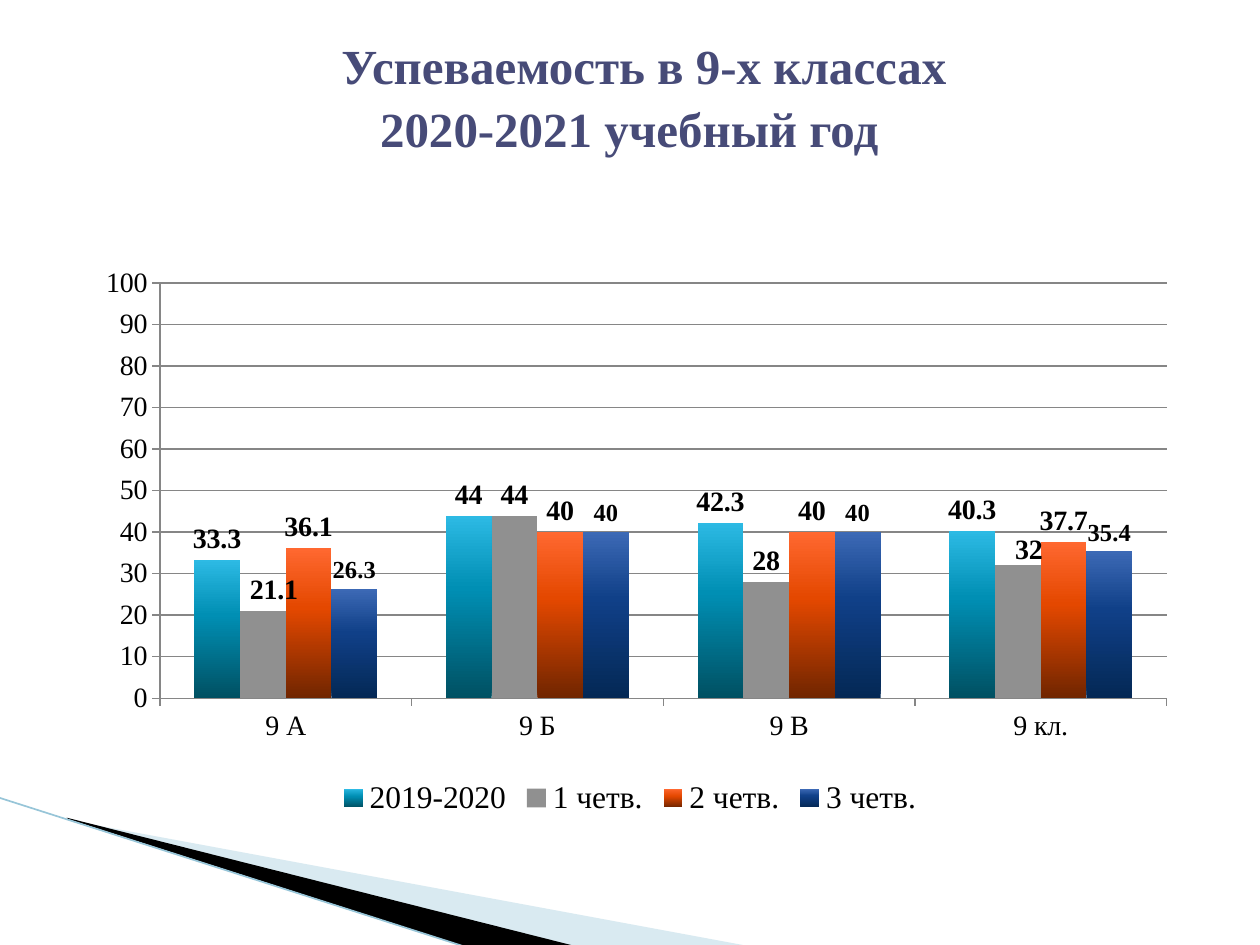
import copy

import pptx
import pptx.chart.data
import pptx.dml.color
import pptx.enum.chart
import pptx.enum.text
import pptx.oxml
import pptx.oxml.ns
import pptx.util
from lxml import etree

Inches, Pt = pptx.util.Inches, pptx.util.Pt
RGBColor = pptx.dml.color.RGBColor
qn = pptx.oxml.ns.qn

SERIF, MONO = "Times New Roman", "DejaVu Sans Mono"
BLACK = RGBColor(0x00, 0x00, 0x00)
PALE_BLUE = RGBColor(0xA0, 0xCB, 0xDC)
EDGE_BLUE = RGBColor(0x97, 0xC5, 0xD8)
INDIGO = RGBColor(0x47, 0x4B, 0x78)
DARK_GRAY = RGBColor(0x46, 0x46, 0x46)
AXIS_GRAY = RGBColor(0x86, 0x86, 0x86)
BAR_GRAY = RGBColor(0x90, 0x90, 0x90)
# Bar gradients run from the foot of the bar to its top
TEAL = [RGBColor(0x00, 0x50, 0x62), RGBColor(0x00, 0x8F, 0xB4), RGBColor(0x2D, 0xBA, 0xE4)]
ORANGE = [RGBColor(0x70, 0x25, 0x00), RGBColor(0xE4, 0x48, 0x00), RGBColor(0xFF, 0x68, 0x30)]
NAVY = [RGBColor(0x04, 0x28, 0x55), RGBColor(0x10, 0x40, 0x88), RGBColor(0x3C, 0x69, 0xB5)]


class SlideBuilder:
    def __init__(self, slide):
        self.slide = slide

    def style(self, font, size, color=BLACK, bold=False, name=SERIF):
        font.name, font.size, font.bold = name, Pt(size), bold
        font.color.rgb = color

    def title(self, lines, box, size):
        title = self.slide.shapes.title
        title.left, title.top, title.width, title.height = map(Inches, box)
        frame = title.text_frame
        frame.auto_size = pptx.enum.text.MSO_AUTO_SIZE.NONE
        frame.vertical_anchor = pptx.enum.text.MSO_ANCHOR.MIDDLE
        paragraph = frame.paragraphs[0]
        paragraph.alignment = pptx.enum.text.PP_ALIGN.CENTER
        lead = paragraph.add_run()
        lead.text = " "
        self.style(lead.font, 39.6, DARK_GRAY, True, MONO)
        for line in lines:
            run = paragraph.add_run()
            run.text = line
            self.style(run.font, size, INDIGO, True)
            paragraph.add_line_break()
        # Line breaks keep the height of the text around them
        for line_break in paragraph._p.findall(qn("a:br")):
            line_break.append(copy.deepcopy(run._r.find(qn("a:rPr"))))
        etree.SubElement(paragraph._p, qn("a:endParaRPr"), sz=str(int(size * 100)))

    def wedge(self, points, color, opacity=None):
        corners = [(Inches(x), Inches(y)) for x, y in points]
        builder = self.slide.shapes.build_freeform(*corners[0])
        builder.add_line_segments(corners[1:], close=True)
        wedge = builder.convert_to_shape()
        wedge.shadow.inherit = False
        wedge.fill.solid()
        wedge.fill.fore_color.rgb = color
        wedge.line.fill.background()
        if opacity:
            fill = wedge._element.spPr.find(qn("a:solidFill"))
            etree.SubElement(fill[0], qn("a:alpha"), val=str(opacity * 1000))

    def line(self, start, end, color, width):
        line = self.slide.shapes.add_connector(
            pptx.enum.shapes.MSO_CONNECTOR.STRAIGHT, *map(Inches, start + end))
        line.line.color.rgb = color
        line.line.width = Pt(width)
        etree.SubElement(line._element.spPr, qn("a:effectLst"))

    def paint(self, fill, colors):
        if isinstance(colors, RGBColor):
            fill.solid()
            fill.fore_color.rgb = colors
            return
        fill.gradient()
        fill.gradient_angle = 90
        stops = fill.gradient_stops
        first = stops[0]._gs
        first.addnext(copy.deepcopy(first))
        for stop, color, position in zip(fill.gradient_stops, colors, (0, 0.6, 1)):
            stop.color.rgb = color
            stop.position = position

    def layout(self, **values):
        layout = etree.Element(qn("c:layout"))
        manual = etree.SubElement(layout, qn("c:manualLayout"))
        for tag, value in values.items():
            etree.SubElement(manual, qn("c:" + tag), val=str(value))
        return layout

    def axis(self, axis, size):
        axis.major_tick_mark = pptx.enum.chart.XL_TICK_MARK.OUTSIDE
        axis.minor_tick_mark = pptx.enum.chart.XL_TICK_MARK.NONE
        axis.format.line.color.rgb = AXIS_GRAY
        self.style(axis.tick_labels.font, size)

    def labels(self, labels, size):
        self.style(labels.font, size, bold=True)
        labels.position = pptx.enum.chart.XL_LABEL_POSITION.OUTSIDE_END

    def column_chart(self, box, categories, series, plot_box):
        data = pptx.chart.data.CategoryChartData()
        data.categories = categories
        for name, values, *_ in series:
            data.add_series(name, values)
        chart = self.slide.shapes.add_chart(
            pptx.enum.chart.XL_CHART_TYPE.COLUMN_CLUSTERED, *map(Inches, box), data).chart
        chart.has_title = False
        self.style(chart.font, 18, name=MONO)

        # Axes and grid
        self.axis(chart.category_axis, 16)
        scale = chart.value_axis
        self.axis(scale, 16)
        scale.minimum_scale, scale.maximum_scale, scale.major_unit = 0, 100, 10
        scale.has_major_gridlines = True
        scale.major_gridlines.format.line.color.rgb = AXIS_GRAY

        # Legend
        chart.has_legend = True
        chart.legend.position = pptx.enum.chart.XL_LEGEND_POSITION.BOTTOM
        chart.legend.include_in_layout = False
        self.style(chart.legend.font, 18)

        # Bars and their values
        plot = chart.plots[0]
        plot.vary_by_categories = False
        plot.gap_width, plot.overlap = 150, 0
        for bars, (_, _, colors, size, shifts) in zip(plot.series, series):
            self.paint(bars.format.fill, colors)
            bars.data_labels.show_value = True
            self.labels(bars.data_labels, size)
            for index, (x, y) in shifts.items():
                label = bars.points[index].data_label
                self.labels(label, size)
                entry = bars.data_labels._element.find(qn("c:dLbl") + f"[{index and 2 or 1}]")
                entry.find(qn("c:idx")).addnext(self.layout(x=x, y=y))

        # Plot area
        area = chart._chartSpace.chart.plotArea
        for old in area.findall(qn("c:layout")):
            area.remove(old)
        x, y, w, h = plot_box
        area.insert(0, self.layout(layoutTarget="inner", xMode="edge", yMode="edge",
                                   x=x, y=y, w=w, h=h))


def main():
    deck = pptx.Presentation()
    deck.slide_width, deck.slide_height = Inches(10), Inches(7.5)
    builder = SlideBuilder(deck.slides.add_slide(deck.slide_layouts[5]))

    # Corner decoration
    builder.wedge([(0.55, 6.51), (5.95, 7.51), (4.56, 7.51), (0.55, 6.5)], PALE_BLUE, 40)
    builder.wedge([(0.53, 6.49), (4.57, 7.51), (3.72, 7.52), (0.54, 6.5)], BLACK)
    builder.line((-0.01, 6.33), (3.71, 7.52), EDGE_BLUE, 0.95)

    # Results by class: name, values, colours, label size, label shifts
    builder.column_chart(
        (0.6, 1.68, 8.8, 4.84),
        ["9 А", "9 Б", "9 В", "9 кл."],
        [("2019-2020", (33.3, 44, 42.3, 40.3), TEAL, 16, {}),
         ("1 четв.", (21.1, 44, 28, 32), BAR_GRAY, 16, {0: (0.01, 0), 3: (0.01, 0.01)}),
         ("2 четв.", (36.1, 40, 40, 37.7), ORANGE, 16, {}),
         ("3 четв.", (26.3, 40, 40, 35.4), NAVY, 14, {})],
        (0.076, 0.117, 0.908, 0.681))

    # Heading
    builder.title(["Успеваемость в 9-х классах", " 2020-2021 учебный год"],
                  (0.43, 0.44, 9.03, 0.95), 28)
    deck.save("out.pptx")


if __name__ == "__main__":
    main()
